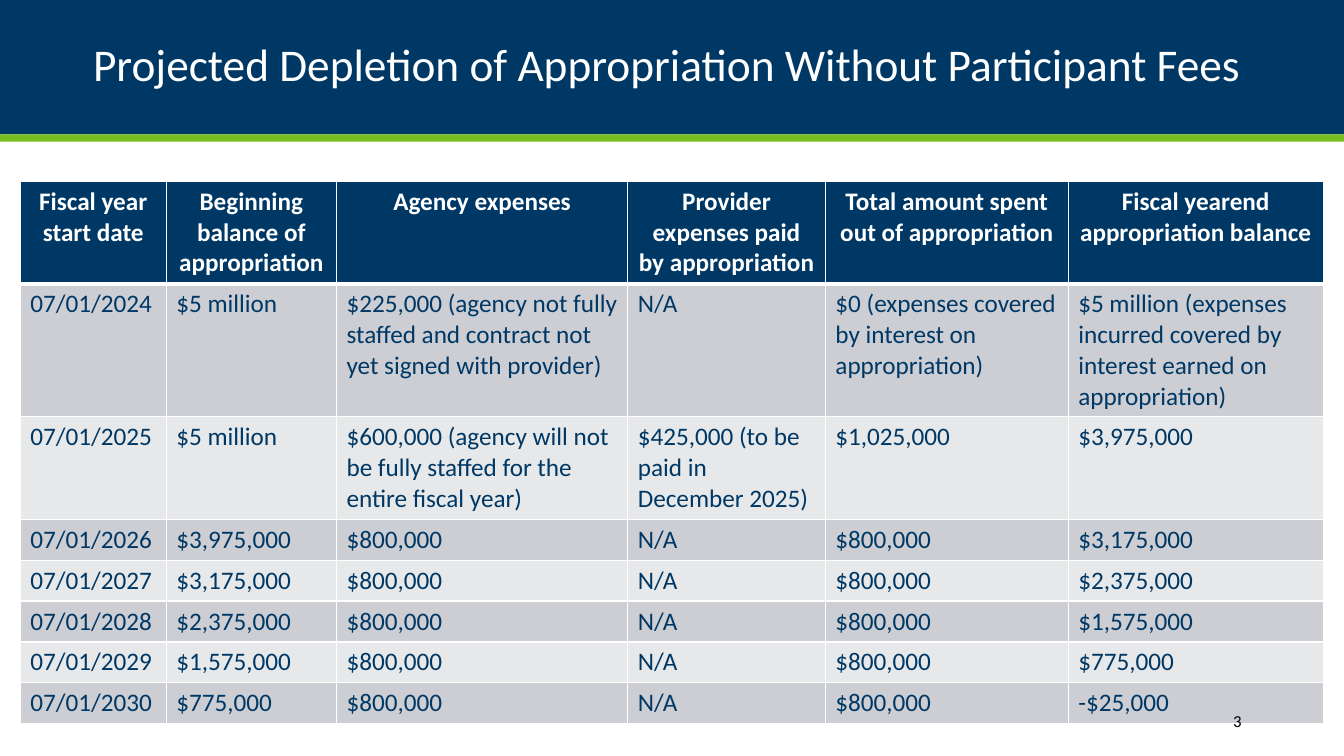
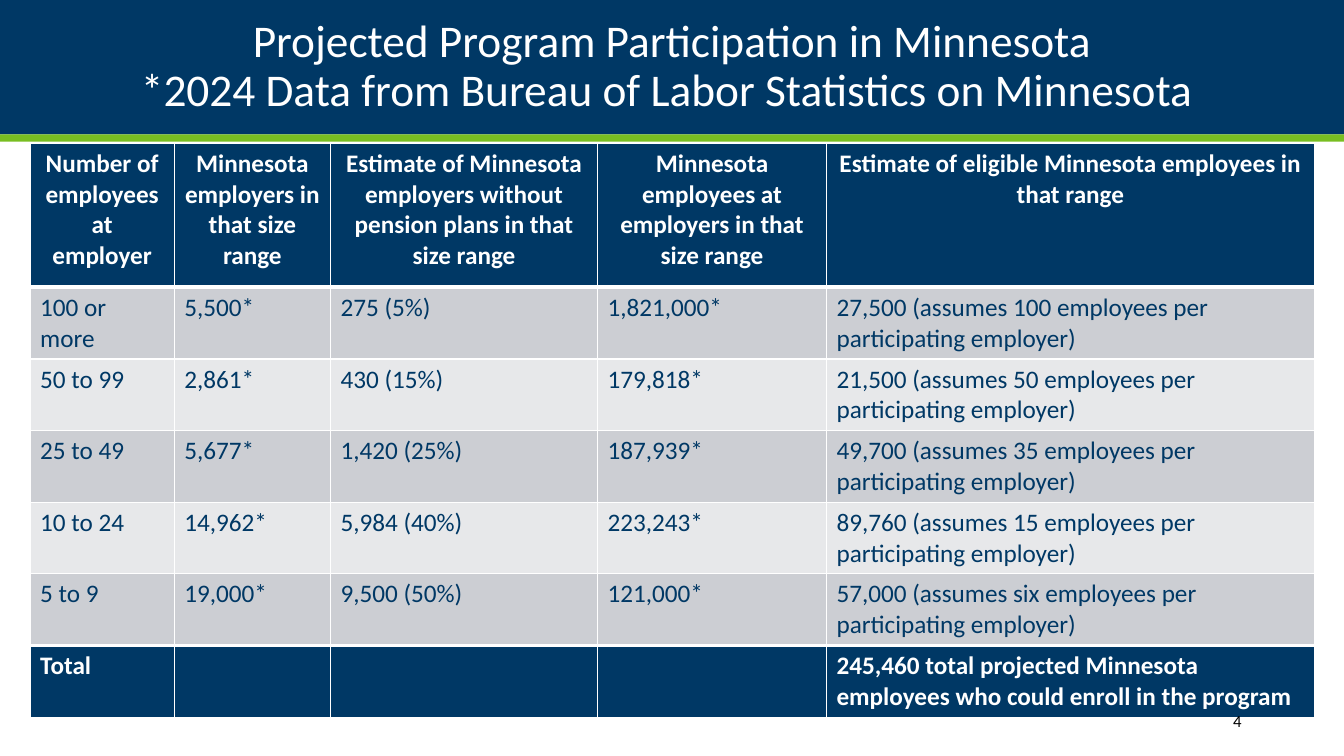
"""Builds two slides of projection tables on appropriation and participation."""
from lxml.etree import SubElement
from pptx import Presentation
from pptx.dml.color import RGBColor
from pptx.enum.shapes import MSO_SHAPE
from pptx.enum.text import MSO_ANCHOR, MSO_AUTO_SIZE, PP_ALIGN
from pptx.oxml.ns import qn
from pptx.util import Cm, Pt

NAVY, GREEN, WHITE, BLACK = "003865", "78BE21", "FFFFFF", "000000"
STRIPES = ["CCCED3", "E7E8EA"]
FONT = "Calibri"
SLIDE_WIDTH, BAND_HEIGHT, RULE_HEIGHT = Cm(33.87), Cm(3.39), Cm(0.18)
THIN, THICK = Pt(1), Pt(3)

SLIDES = [
    {
        "title": ["Projected Depletion of Appropriation Without Participant Fees "],
        "number": "3",
        "corner": (0.51, 4.57),
        "columns": [3.68, 4.29, 7.34, 4.98, 6.12, 6.43],
        "heights": [2.54, 3.2, 2.46] + [1.02] * 5,
        "has_total": False,
        "rows": [
            ["Fiscal year start date", "Beginning balance of appropriation", "Agency expenses",
             "Provider expenses paid by appropriation", "Total amount spent out of appropriation",
             "Fiscal yearend appropriation balance"],
            ["07/01/2024", "$5 million",
             "$225,000 (agency not fully staffed and contract not yet signed with provider)", "N/A",
             "$0 (expenses covered by interest on appropriation)",
             "$5 million (expenses incurred covered by interest earned on appropriation)"],
            ["07/01/2025", "$5 million",
             "$600,000 (agency will not be fully staffed for the entire fiscal year)",
             "$425,000 (to be paid in December 2025)", "$1,025,000", "$3,975,000"],
            ["07/01/2026", "$3,975,000", "$800,000", "N/A", "$800,000", "$3,175,000"],
            ["07/01/2027", "$3,175,000", "$800,000", "N/A", "$800,000", "$2,375,000"],
            ["07/01/2028", "$2,375,000", "$800,000", "N/A", "$800,000", "$1,575,000"],
            ["07/01/2029", "$1,575,000", "$800,000", "N/A", "$800,000", "$775,000"],
            ["07/01/2030", "$775,000", "$800,000", "N/A", "$800,000", "-$25,000"],
        ],
    },
    {
        "title": ["Projected Program Participation in Minnesota",
                  "*2024 Data from Bureau of Labor Statistics on Minnesota "],
        "number": "4",
        "corner": (0.76, 3.61),
        "columns": [3.63, 3.94, 6.73, 5.77, 12.29],
        "heights": [3.63] + [1.8] * 6,
        "has_total": True,
        "rows": [
            ["Number of employees at employer", "Minnesota employers in that size range",
             "Estimate of Minnesota employers without pension plans in that size range",
             "Minnesota employees at employers in that size range",
             "Estimate of eligible Minnesota employees in that range"],
            ["100 or more", "5,500*", "275 (5%)", "1,821,000*",
             "27,500 (assumes 100 employees per participating employer)"],
            ["50 to 99", "2,861*", "430 (15%)", "179,818*",
             "21,500 (assumes 50 employees per participating employer)"],
            ["25 to 49", "5,677*", "1,420 (25%)", "187,939*",
             "49,700 (assumes 35 employees per participating employer)"],
            ["10 to 24", "14,962*", "5,984 (40%)", "223,243*",
             "89,760 (assumes 15 employees per participating employer)"],
            ["5 to 9", "19,000*", "9,500 (50%)", "121,000*",
             "57,000 (assumes six employees per participating employer)"],
            ["Total", "", "", "",
             "245,460 total projected Minnesota employees who could enroll in the program"],
        ],
    },
]


def paint(fill, color):
    fill.solid()
    fill.fore_color.rgb = RGBColor.from_string(color)


def add_run(paragraph, text, size, color, bold=False):
    run = paragraph.add_run()
    run.text = text
    run.font.name = FONT
    run.font.size = Pt(size)
    run.font.bold = bold
    run.font.color.rgb = RGBColor.from_string(color)


prs = Presentation()
prs.slide_width, prs.slide_height = SLIDE_WIDTH, Cm(19.05)
layout = prs.slide_layouts[5]

for index, content in enumerate(SLIDES):
    slide = prs.slides.add_slide(layout)

    if index == 0:
        bands = [(0, BAND_HEIGHT, NAVY), (BAND_HEIGHT, RULE_HEIGHT, GREEN)]
        for position, (top, height, color) in enumerate(bands, start=2):
            band = slide.shapes.add_shape(MSO_SHAPE.RECTANGLE, 0, top, SLIDE_WIDTH, height)
            band.shadow.inherit = False
            paint(band.fill, color)
            band.line.fill.background()
            layout.shapes.element.insert(position, band.element)

    title = slide.shapes.title
    title.left, title.top, title.width, title.height = Cm(2.33), 0, Cm(29.21), BAND_HEIGHT
    frame = title.text_frame
    frame.word_wrap = True
    frame.auto_size = MSO_AUTO_SIZE.NONE
    frame.vertical_anchor = MSO_ANCHOR.MIDDLE
    frame.margin_left = frame.margin_right = 0
    frame.margin_top = frame.margin_bottom = Cm(0.51)
    heading = frame.paragraphs[0]
    heading.alignment = PP_ALIGN.CENTER
    heading.line_spacing = 0.9
    for line_index, line in enumerate(content["title"]):
        if line_index:
            heading.add_line_break()
        add_run(heading, line, 32.4, WHITE)

    rows, columns, heights = content["rows"], content["columns"], content["heights"]
    left, top = content["corner"]
    projection = slide.shapes.add_table(
        len(rows), len(columns), Cm(left), Cm(top), Cm(sum(columns)), Cm(sum(heights))
    ).table
    projection.horz_banding = False
    projection.last_row = content["has_total"]
    for column, width in zip(projection.columns, columns):
        column.width = Cm(width)

    total_row = len(rows) - 1 if content["has_total"] else None
    thick_edges = {1, total_row}
    for r, texts in enumerate(rows):
        projection.rows[r].height = Cm(heights[r])
        emphasized = r in (0, total_row)
        edges = {
            "a:lnL": THIN,
            "a:lnR": THIN,
            "a:lnT": THICK if r in thick_edges else THIN,
            "a:lnB": THICK if r + 1 in thick_edges else THIN,
        }
        for c, text in enumerate(texts):
            cell = projection.cell(r, c)
            properties = cell._tc.get_or_add_tcPr()
            for tag, weight in edges.items():
                edge = SubElement(properties, qn(tag), w=str(weight))
                edge_fill = SubElement(edge, qn("a:solidFill"))
                SubElement(edge_fill, qn("a:srgbClr"), val=WHITE)
            paint(cell.fill, NAVY if emphasized else STRIPES[(r - 1) % 2])
            paragraph = cell.text_frame.paragraphs[0]
            paragraph.alignment = PP_ALIGN.LEFT if r else PP_ALIGN.CENTER
            if text:
                add_run(paragraph, text, 18, WHITE if emphasized else NAVY, emphasized)

    page_number = slide.shapes.add_textbox(Cm(27.48), Cm(17.65), Cm(4.06), Cm(1.02)).text_frame
    page_number.word_wrap = True
    page_number.vertical_anchor = MSO_ANCHOR.MIDDLE
    page_number.paragraphs[0].alignment = PP_ALIGN.RIGHT
    add_run(page_number.paragraphs[0], content["number"], 12, BLACK)

prs.save("out.pptx")
